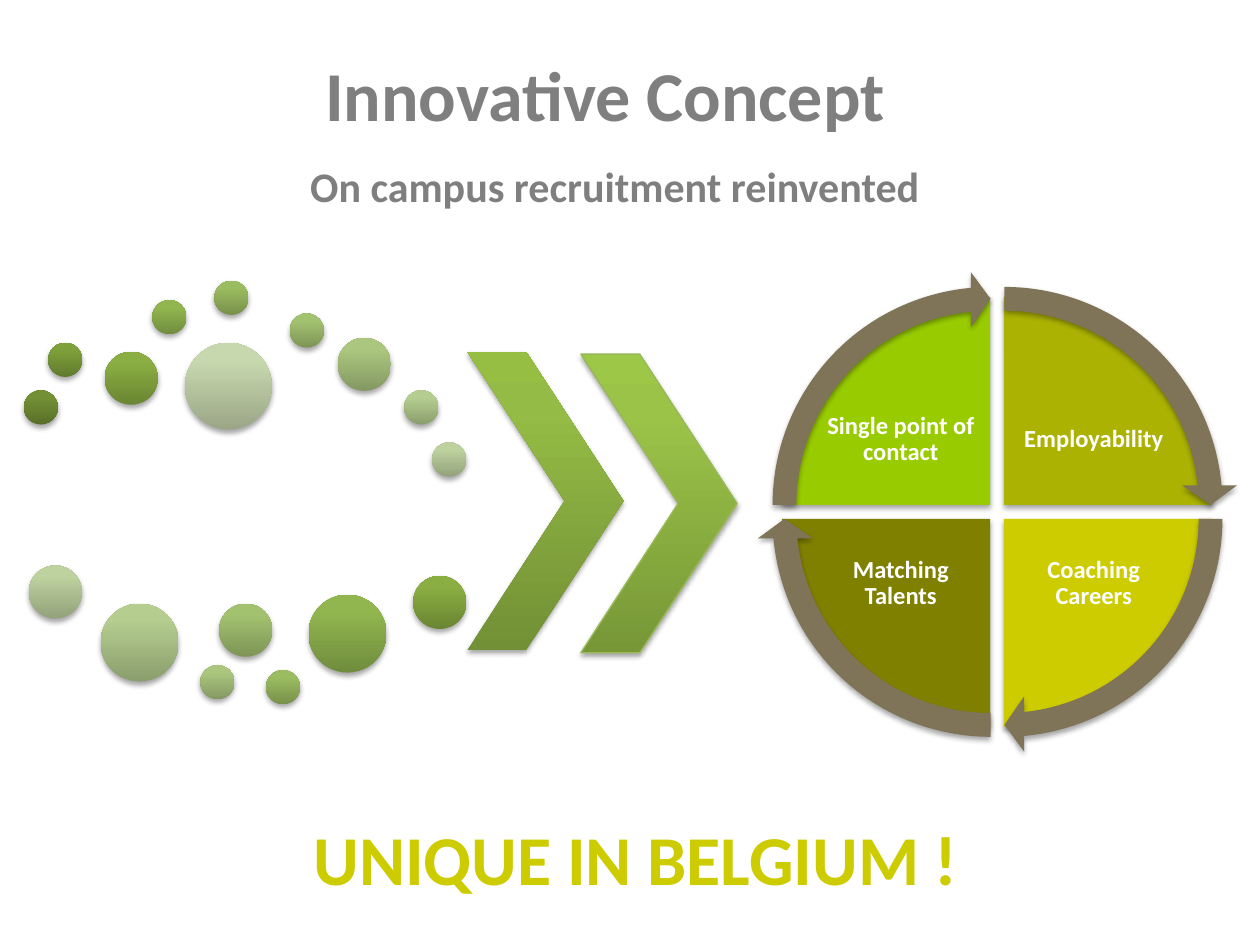
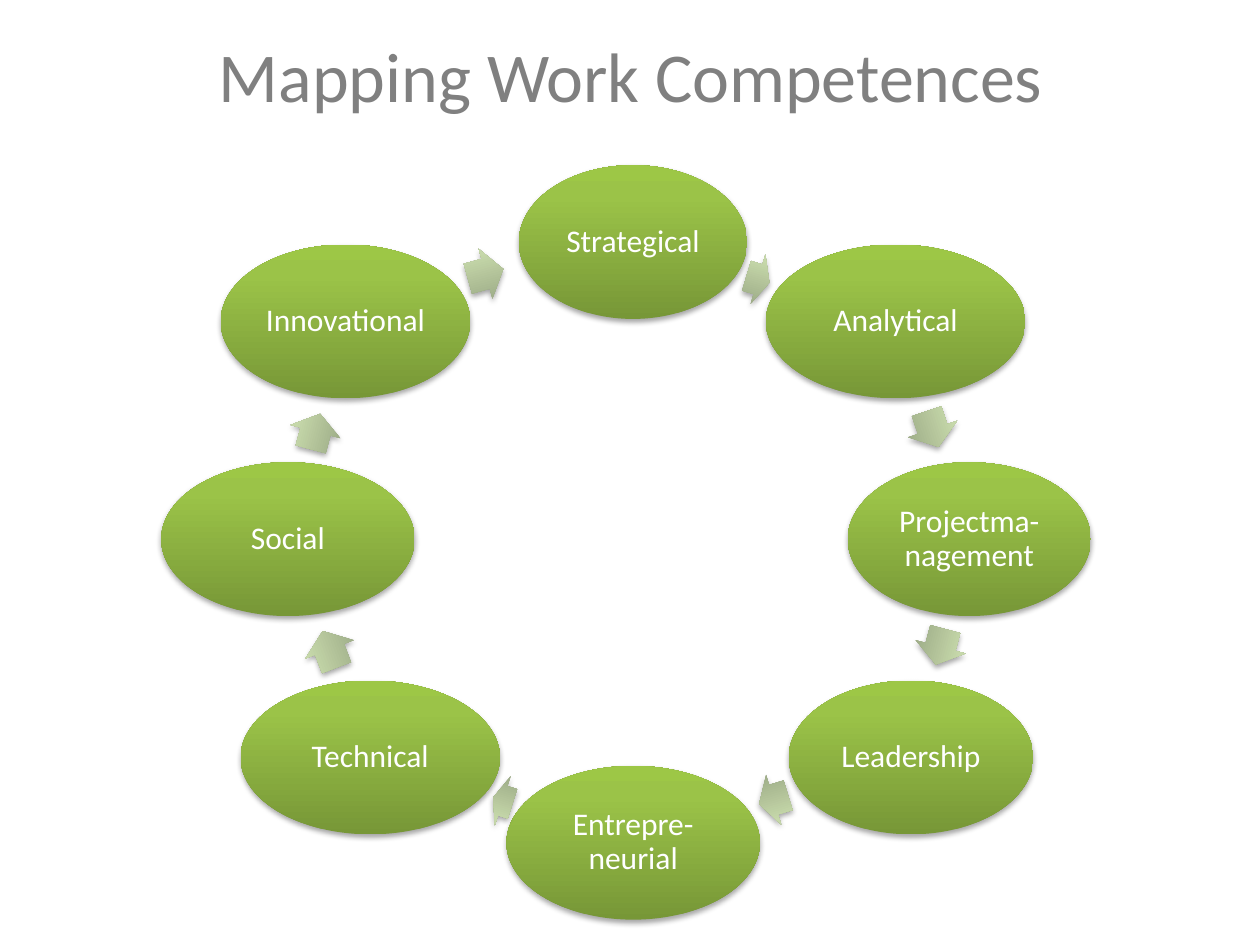
"""Build two slides: the recruitment concept and the ring of work competences."""
from copy import deepcopy
from math import sqrt

from lxml import etree
from pptx import Presentation
from pptx.dml.color import RGBColor
from pptx.enum import shapes, text
from pptx.oxml import ns
from pptx.util import Cm, Pt

FONT = "Calibri"
WHITE = RGBColor(0xFF, 0xFF, 0xFF)
GREY = RGBColor(0x7F, 0x7F, 0x7F)
SILVER = RGBColor(0x80, 0x80, 0x80)
YELLOW = RGBColor(0xCC, 0xCC, 0x00)
MOSS = RGBColor(0xAB, 0xB2, 0x02)
OLIVE = RGBColor(0x80, 0x80, 0x00)
LIME = RGBColor(0x99, 0xCC, 0x00)
BROWN = RGBColor(0x7F, 0x73, 0x58)
EDGE = RGBColor(0x98, 0xB9, 0x55)
LEAF = [RGBColor.from_string(c) for c in ("779737", "9BC348", "9DC746")]
STEM = [RGBColor.from_string(c) for c in ("729035", "94BB45", "96BE43")]
PALE = [RGBColor.from_string(c) for c in ("98A683", "C6D8AA", "C7DAAA")]
SHADES = [[RGBColor.from_string(c) for c in row.split()] for row in (
    "596F29 739035 749334",
    "617B2E 7EA03B 7FA339",
    "6A8633 8AAE42 8BB140",
    "708D3D 92B64F 93B94E",
    "78914A 9BBC60 9CBF5F",
    "7E9556 A3C270 A4C46F",
    "849962 ABC77F ADC97F",
    "8B9E6E B5CD8F B6CF8F",
    "93A27A BED29F BFD49F",
    "9AA686 C8D8AE C9DAAE",
)]
KIND = shapes.MSO_SHAPE


def write(slide, words, at, size=40, color=GREY, bold=True, inset=None, lead=None):
    box = slide.shapes.add_textbox(*map(Cm, at))
    frame = box.text_frame
    frame.word_wrap = True
    if inset is not None:
        frame.vertical_anchor = text.MSO_ANCHOR.MIDDLE
        frame.margin_left = frame.margin_right = Cm(inset)
        frame.margin_top = frame.margin_bottom = Cm(inset)
    par = frame.paragraphs[0]
    par.alignment = text.PP_ALIGN.CENTER
    par.line_spacing = lead
    run = par.add_run()
    run.text = words
    run.font.name, run.font.size, run.font.bold = FONT, Pt(size), bold
    run.font.color.rgb = color


def draw(slide, kind, at, fill, adjust=(), turn=0, edge=None):
    shape = slide.shapes.add_shape(kind, *map(Cm, at))
    shape.rotation = turn
    for i, value in enumerate(adjust):
        shape.adjustments[i] = value
    if isinstance(fill, RGBColor):
        shape.fill.solid()
        shape.fill.fore_color.rgb = fill
    else:
        shape.fill.gradient()
        shape.fill.gradient_angle = 90
        stops = shape._element.spPr.find(".//" + ns.qn("a:gsLst"))
        stops.insert(1, deepcopy(stops[0]))
        for stop, color, place in zip(shape.fill.gradient_stops, fill, (0, 0.8, 1)):
            stop.color.rgb = color
            stop.position = place
    if edge is None:
        shape.line.fill.background()
    else:
        shape.line.color.rgb = edge
        shape.line.width = Pt(0.75)
    shape.shadow.inherit = False
    effects = shape._element.spPr.find(ns.qn("a:effectLst"))
    shade = etree.SubElement(effects, ns.qn("a:outerShdw"), blurRad=str(Pt(3.1)),
                             dist=str(Pt(1.8)), dir="5400000", rotWithShape="0")
    black = etree.SubElement(shade, ns.qn("a:srgbClr"), val="000000")
    etree.SubElement(black, ns.qn("a:alpha"), val="35000")


deck = Presentation()
deck.slide_width, deck.slide_height = Cm(25.4), Cm(19.05)
blank = deck.slide_layouts[6]

idea = deck.slides.add_slide(blank)
write(idea, "Innovative Concept", (1.3, 0.91, 21.79, 2.74))
write(idea, "On campus recruitment reinvented", (1.5, 3.12, 21.79, 2.06), size=24)

parts = [
    ("Employability", 1, 0, MOSS, 162),
    ("Coaching Careers", 1, 1, YELLOW, 0),
    ("Matching Talents", 0, 1, OLIVE, 54),
    ("Single point of contact", 0, 0, LIME, 108),
]
for words, col, row, color, start in parts:
    draw(idea, KIND.PIE, (15.77 + 0.28 * col, 5.99 + 0.28 * row, 8.38, 8.38),
         color, adjust=(start, (start + 54) % 216))
    write(idea, words, (16.61 + 3.89 * col, 7.72 + 2.9 * row, 3.1, 2.29),
          size=14, color=WHITE, inset=0.05, lead=0.9)
for words, col, row, color, start in parts:
    draw(idea, KIND.CIRCULAR_ARROW, (15.26 + 0.28 * col, 5.47 + 0.28 * row, 9.42, 9.42),
         BROWN, adjust=(0.051, 3.275, start + 50.725, start, 0.059))

SMALL, MID, LARGE, HUGE = 0.69, 1.07, 1.57, 1.75
upper = [
    (0.48, 7.87, SMALL), (0.97, 6.91, SMALL), (2.11, 7.09, MID), (3.07, 6.05, SMALL),
    (4.32, 5.66, SMALL), (5.84, 6.32, SMALL), (6.81, 6.81, MID), (8.15, 7.87, SMALL),
    (8.71, 8.92, SMALL), (3.73, 6.91, HUGE),
]
lower = [
    (0.58, 11.4, MID), (2.03, 12.17, LARGE), (4.04, 13.41, SMALL), (4.42, 12.17, MID),
    (5.36, 13.51, SMALL), (6.22, 11.99, LARGE), (8.33, 11.61, MID),
]
for (left, top, size), shade in zip(upper + lower, SHADES + SHADES[8:1:-1]):
    draw(idea, KIND.OVAL, (left, top, size, size), shade)

draw(idea, KIND.CHEVRON, (9.42, 7.09, 3.15, 6.02), STEM, adjust=(0.623,))
draw(idea, KIND.CHEVRON, (11.71, 7.14, 3.15, 6.02), LEAF, adjust=(0.623,), edge=EDGE)
write(idea, "UNIQUE IN BELGIUM !", (0.71, 16.31, 24.21, 2.74), color=YELLOW)

ring = deck.slides.add_slide(blank)
skills = [
    ("Strategical", (10.46, 3.33, 4.6), (15.04, 5.11, 0.48), 16.7),
    ("Analytical", (15.44, 4.93, 5.23), (18.42, 8.13, 0.76), 71.4),
    ("Projectma-nagement", (17.09, 9.32, 4.9), (18.59, 12.52, 0.74), 105),
    ("Leadership", (15.9, 13.72, 4.93), (15.29, 15.6, 0.61), 163.1),
    ("Entrepre-neurial", (10.21, 15.44, 5.11), (9.93, 15.62, 0.41), 197.9),
    ("Technical", (4.85, 13.72, 5.23), (6.25, 12.57, 0.79), 249.2),
    ("Social", (3.25, 9.32, 5.11), (5.99, 8.18, 0.74), 284.9),
    ("Innovational", (4.45, 4.93, 5.03), (9.42, 5, 0.74), 344.6),
]
HIGH = 3.1
inner = 1 / sqrt(2)
rim = (1 - inner) / 2
for words, (left, top, wide), arrow, turn in skills:
    draw(ring, KIND.OVAL, (left, top, wide, HIGH), LEAF)
    write(ring, words, (left + wide * rim, top + HIGH * rim, wide * inner, HIGH * inner),
          size=18, color=WHITE, bold=False, inset=0.08, lead=0.9)
    draw(ring, KIND.RIGHT_ARROW, (*arrow, 1.04), PALE, adjust=(0.6, 0.5), turn=turn)
write(ring, "Mapping Work Competences", (0.51, 0.53, 24.41, 1.96), color=SILVER, bold=False)

deck.save("out.pptx")
